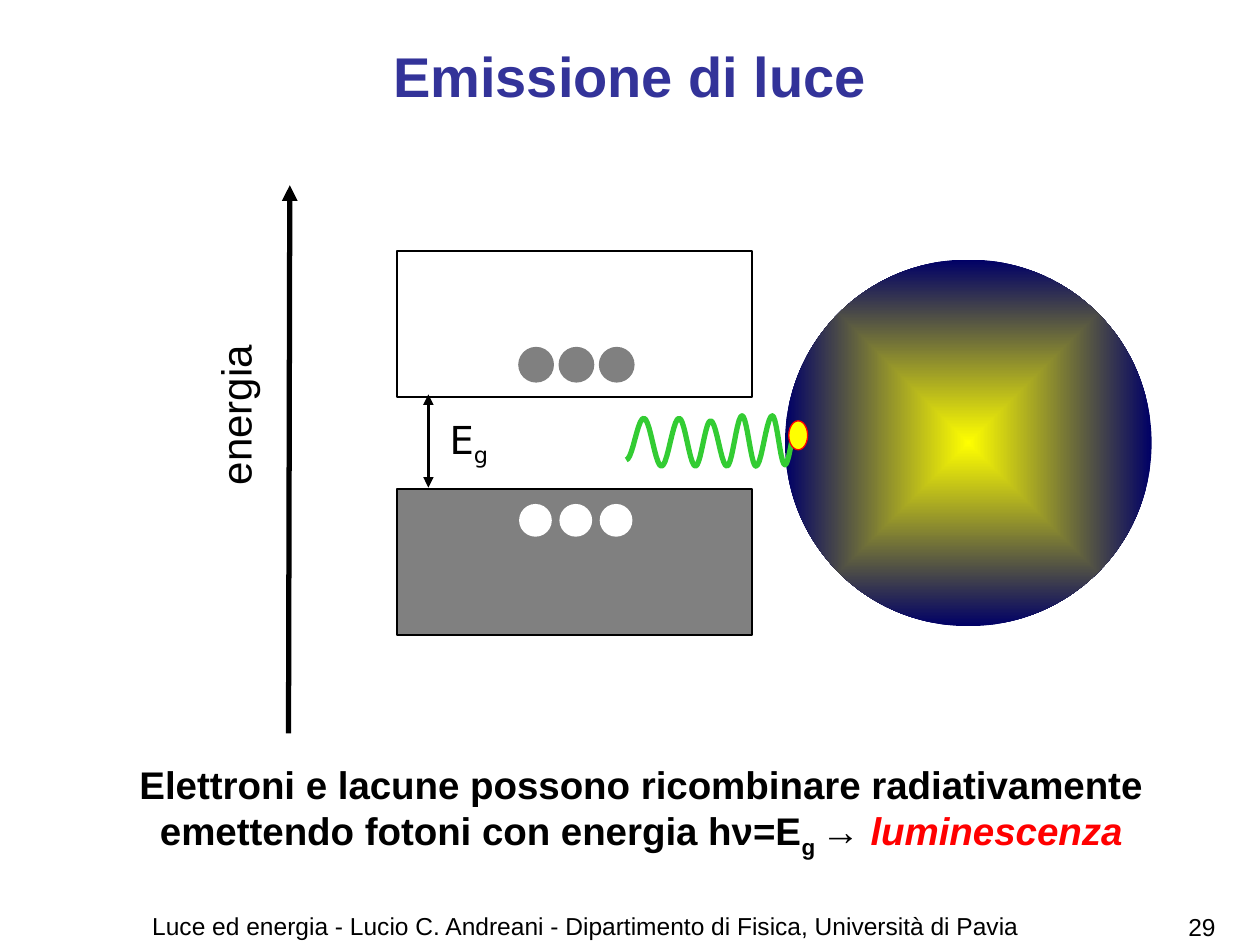
import math
import lxml.etree
import pptx
import pptx.util
import pptx.dml.color
import pptx.enum.shapes
import pptx.enum.text
import pptx.oxml.ns

Inches = pptx.util.Inches
Pt = pptx.util.Pt
SHAPE = pptx.enum.shapes.MSO_SHAPE
ALIGN = pptx.enum.text.PP_ALIGN
COLORS = {
    "black": "000000", "white": "FFFFFF", "gray": "808080", "title": "333399",
    "red": "FF0000", "yellow": "FFFF00", "navy": "000066", "green": "33CC33",
}


def color(name):
    return pptx.dml.color.RGBColor.from_string(COLORS[name])


def child(node, tag, **attrs):
    return lxml.etree.SubElement(node, pptx.oxml.ns.qn(tag), **attrs)


def paint(shape, fill=None, line=None, width=1):
    shape.shadow.inherit = False
    if fill:
        shape.fill.solid()
        shape.fill.fore_color.rgb = color(fill)
    else:
        shape.fill.background()
    if line:
        shape.line.color.rgb = color(line)
        shape.line.width = Pt(width)
    else:
        shape.line.fill.background()


def add_form(slide, kind, box, fill=None, line=None, width=1):
    shape = slide.shapes.add_shape(kind, *map(Inches, box))
    paint(shape, fill, line, width)
    return shape


def add_glow(slide, box, inner, outer):
    shape = add_form(slide, SHAPE.OVAL, box)
    shape.fill.gradient()
    for stop, name in zip(shape.fill.gradient_stops, (inner, outer)):
        stop.color.rgb = color(name)
    grad = shape.element.spPr.find(pptx.oxml.ns.qn("a:gradFill"))
    grad.remove(grad.find(pptx.oxml.ns.qn("a:lin")))
    center = child(grad, "a:path", path="shape")
    child(center, "a:fillToRect", l="50000", t="50000", r="50000", b="50000")


def add_arrow(slide, start, end, width, both=False):
    line = slide.shapes.add_connector(
        pptx.enum.shapes.MSO_CONNECTOR.STRAIGHT, *map(Inches, start + end))
    line.line.color.rgb = color("black")
    line.line.width = Pt(width)
    ends = ("a:headEnd", "a:tailEnd") if both else ("a:tailEnd",)
    for tag in ends:
        child(line.line._get_or_add_ln(), tag, type="triangle")
    child(line._element.spPr, "a:effectLst")


def add_text(slide, box, parts, size, align=ALIGN.CENTER, face="Arial",
             bold=False, tint="black", pad=0.1, turn=0, middle=False):
    shape = slide.shapes.add_textbox(*map(Inches, box))
    shape.rotation = turn
    frame = shape.text_frame
    frame.word_wrap = True
    frame.margin_left = frame.margin_right = Inches(pad)
    if middle:
        frame.vertical_anchor = pptx.enum.text.MSO_ANCHOR.MIDDLE
    para = frame.paragraphs[0]
    para.alignment = align
    for part in parts:
        run = para.add_run()
        run.text = part
        run.font.size = Pt(size)
        run.font.name = face
        run.font.bold = bold
        run.font.color.rgb = color(tint)
    return para.runs


def lower(run):
    run.font._element.set("baseline", "-25000")


def add_wave(slide, knots, steps=10):
    points = [knots[0]]
    for (x, y), (right, low) in zip(knots, knots[1:]):
        for step in range(1, steps + 1):
            part = step / steps
            ease = (1 - math.cos(math.pi * part)) / 2
            points.append((x + (right - x) * part, y + (low - y) * ease))
    spots = [(Inches(x), Inches(y)) for x, y in points]
    pen = slide.shapes.build_freeform(*spots[0])
    pen.add_line_segments(spots[1:], close=False)
    paint(pen.convert_to_shape(), line="green", width=3)


def add_bands(slide):
    add_form(slide, SHAPE.RECTANGLE, (3.15, 3.88, 2.82, 1.16), "gray", "black")
    add_form(slide, SHAPE.RECTANGLE, (3.15, 1.99, 2.82, 1.16), None, "black")
    for left in (4.12, 4.44, 4.76):
        add_form(slide, SHAPE.OVAL, (left, 2.76, 0.27, 0.27), "gray", "gray")
        add_form(slide, SHAPE.OVAL, (left, 4, 0.26, 0.26), "white")
    runs = add_text(slide, (3.47, 3.25, 0.75, 0.46), ["E", "g"], 22,
                    ALIGN.LEFT, "DejaVu Sans")
    lower(runs[1])
    add_arrow(slide, (3.4, 3.13), (3.4, 3.87), 2, both=True)


def add_photon(slide):
    add_glow(slide, (6.23, 2.06, 2.91, 2.91), "yellow", "navy")
    add_wave(slide, [
        (4.97, 3.65), (5.11, 3.32), (5.25, 3.7), (5.39, 3.32), (5.52, 3.7),
        (5.64, 3.34), (5.77, 3.7), (5.89, 3.3), (6, 3.7), (6.13, 3.3),
        (6.23, 3.69), (6.33, 3.36)])
    add_form(slide, SHAPE.OVAL, (6.26, 3.34, 0.15, 0.23), "yellow", "red", 0.75)


def add_note(slide):
    runs = add_text(slide, (0.21, 5.99, 9.76, 0.83), [
        "Elettroni e lacune possono ricombinare radiativamente "
        "emettendo fotoni con energia hν=E", "g ", "→ ", "luminescenza"],
        22, bold=True)
    lower(runs[1])
    runs[3].font.italic = True
    runs[3].font.color.rgb = color("red")


def main():
    deck = pptx.Presentation()
    deck.slide_width = Inches(10)
    deck.slide_height = Inches(7.5)
    slide = deck.slides.add_slide(deck.slide_layouts[6])
    add_text(slide, (0.5, 0.13, 9, 0.93), ["Emissione di luce"], 32,
             bold=True, tint="title", middle=True)
    add_arrow(slide, (2.29, 5.82), (2.3, 1.47), 3)
    add_text(slide, (1.21, 3.05, 1.3, 0.49), ["energia"], 24,
             pad=0, turn=270)
    add_bands(slide)
    add_photon(slide)
    add_note(slide)
    add_text(slide, (0.2, 7.18, 8.9, 0.36), [
        "Luce ed energia - Lucio C. Andreani - "
        "Dipartimento di Fisica, Università di Pavia"], 14)
    add_text(slide, (9.32, 7.19, 0.48, 0.52), ["29 "], 14, ALIGN.RIGHT)
    deck.save("out.pptx")


if __name__ == "__main__":
    main()
